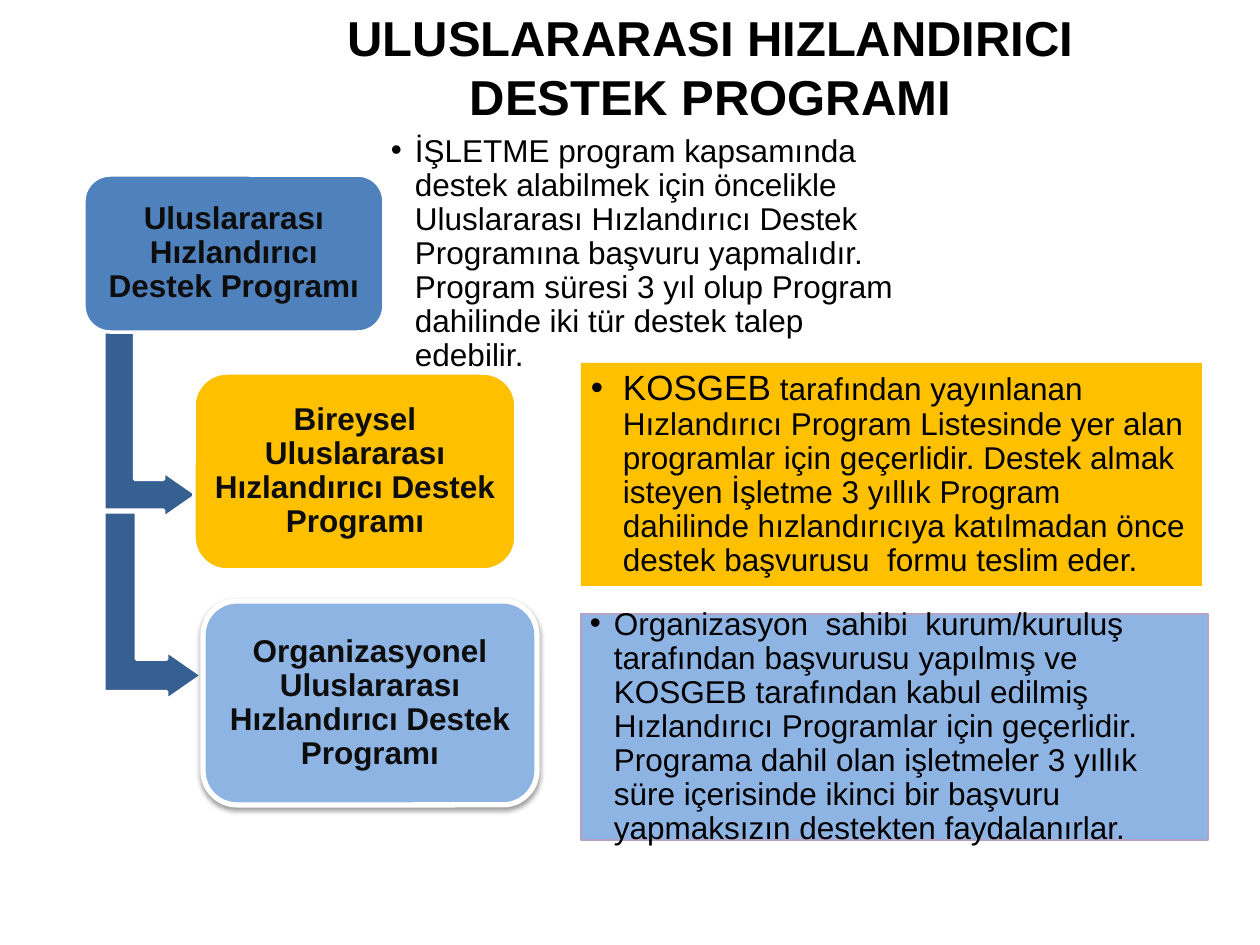
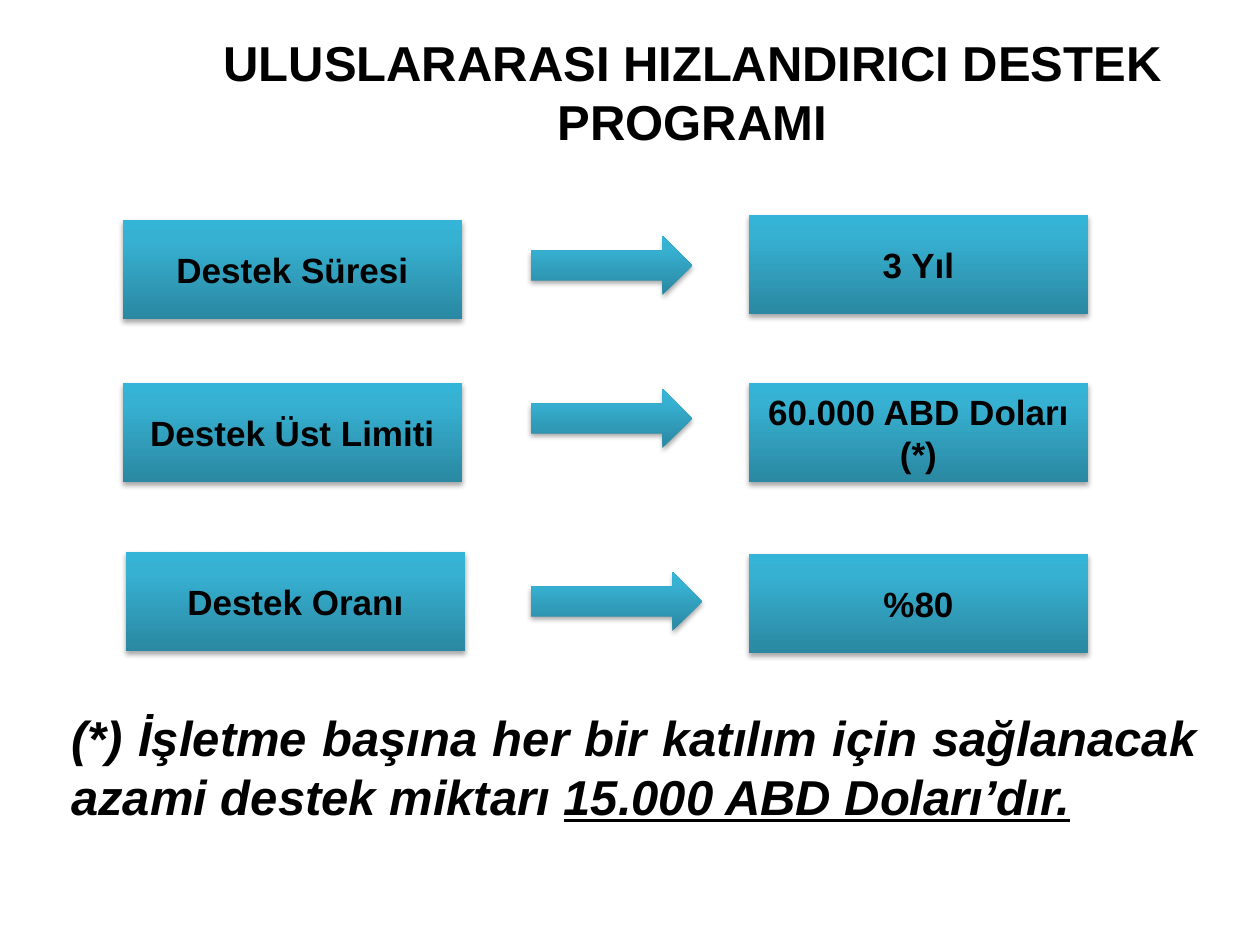
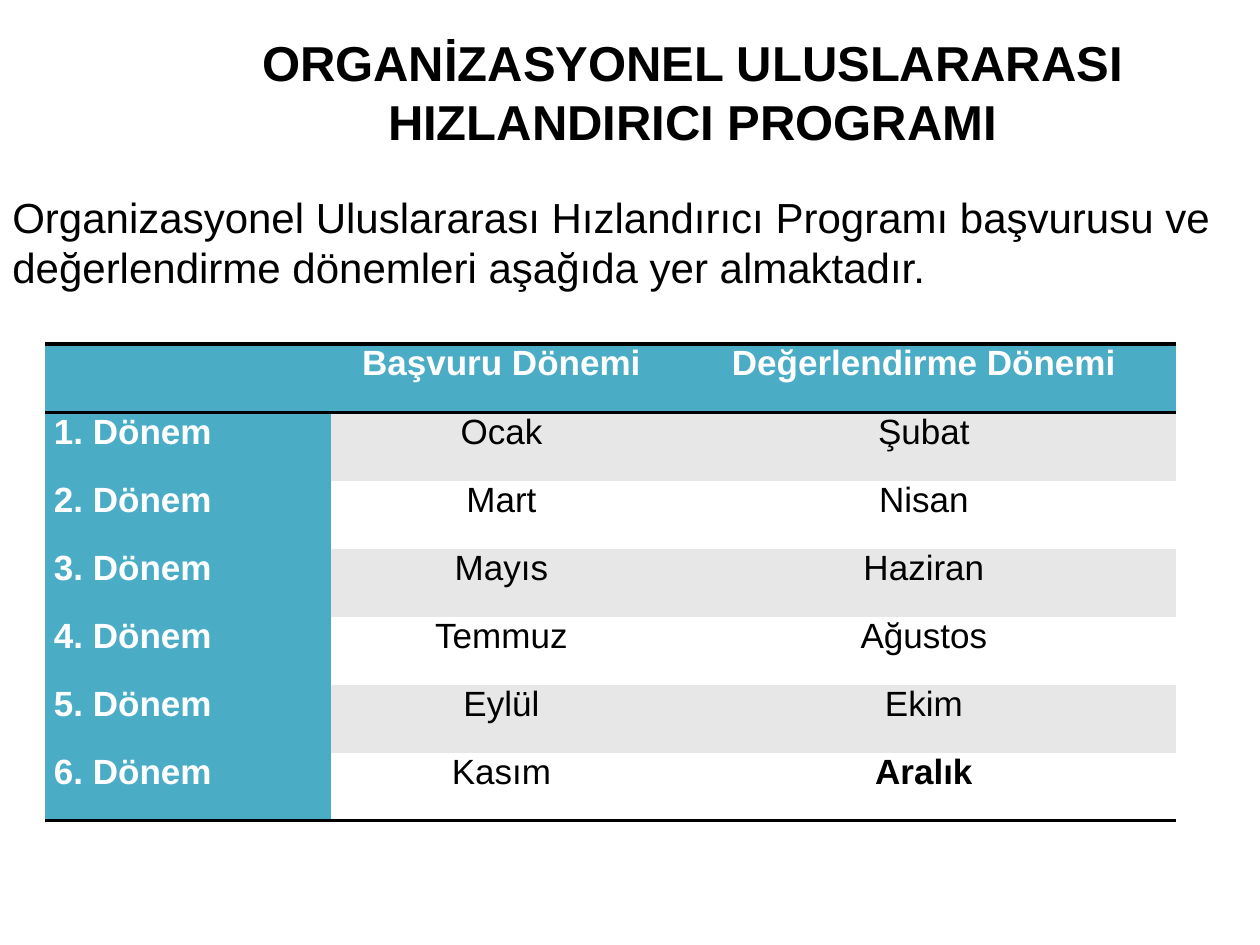
import pptx
import pptx.util
import pptx.dml.color
import pptx.enum.shapes
import pptx.enum.text
import pptx.oxml
import pptx.oxml.ns

PX = 7257  # EMU in one px, 126 px to the inch
FONT = "Arial"
COLORS = {
    "black": "000000", "ink": "0D0D0D", "white": "FFFFFF",
    "blue": "4F81BD", "navy": "376092", "amber": "FFC000",
    "sky": "8EB4E3", "lilac": "B3A2C7", "teal": "4BACC6", "grey": "E7E7E7",
    "deep": "2A88A2", "mid": "37B1D2", "light": "34B4D6",
}
NS = pptx.oxml.ns.nsdecls("a")
SHAPE = pptx.enum.shapes.MSO_SHAPE
ALIGN = pptx.enum.text.PP_ALIGN
MIDDLE = pptx.enum.text.MSO_ANCHOR.MIDDLE
GRADIENT = (
    f'<a:gradFill {NS} rotWithShape="1"><a:gsLst>'
    + "".join(f'<a:gs pos="{pos}"><a:srgbClr val="{COLORS[name]}"/></a:gs>'
              for pos, name in ((0, "deep"), (80000, "mid"), (100000, "light")))
    + '</a:gsLst><a:lin ang="16200000" scaled="0"/></a:gradFill>')


def rgb(name):
    return pptx.dml.color.RGBColor.from_string(COLORS[name])


def write(frame, runs, size, color="black", align=ALIGN.CENTER, inset=None, indent=0, **font):
    """Write one paragraph; each run is its text and the font settings it changes."""
    frame.word_wrap = True
    if inset is not None:
        frame.margin_left = frame.margin_right = inset * PX
        frame.margin_top = frame.margin_bottom = inset * PX
    paragraph = frame.paragraphs[0]
    paragraph.alignment = align
    if indent:
        properties = paragraph._p.get_or_add_pPr()
        properties.set("marL", str(indent * PX))
        properties.set("indent", str(-indent * PX))
        properties.append(pptx.oxml.parse_xml(f'<a:buFont {NS} typeface="{FONT}"/>'))
        properties.append(pptx.oxml.parse_xml(f'<a:buChar {NS} char="•"/>'))
    for text, changes in runs:
        run = paragraph.add_run()
        run.text = text
        run.font.name = FONT
        run.font.color.rgb = rgb(color)
        for key, value in {"size": pptx.util.Pt(size), **font, **changes}.items():
            setattr(run.font, key, value)
    return paragraph


deck = pptx.Presentation()
deck.slide_width = 1260 * PX
deck.slide_height = 945 * PX

# Slides with their titles
program = "ULUSLARARASI HIZLANDIRICI DESTEK PROGRAMI"
slides = []
for heading, at in (
        (program, (233, 1, 955, 131)),
        (program, (174, 26, 1037, 131)),
        ("ORGANİZASYONEL ULUSLARARASI HIZLANDIRICI PROGRAMI", (174, 26, 1037, 131))):
    slide = deck.slides.add_slide(deck.slide_layouts[5])
    title = slide.shapes.title
    title.left, title.top, title.width, title.height = (n * PX for n in at)
    title.text_frame.vertical_anchor = MIDDLE
    write(title.text_frame, [(heading, {})], 28, bold=True)
    slides.append(slide)
overview, terms, periods = slides

# Slide 1: bent arrows, program boxes and their descriptions
PROGRAM_SHAPES = (
    (SHAPE.BENT_UP_ARROW, (53, 374, 195, 93), "navy", "white", 2, None),
    (SHAPE.ROUNDED_RECTANGLE, (84, 175, 300, 157), "blue", "white", 2,
     "Uluslararası Hızlandırıcı Destek Programı"),
    (SHAPE.BENT_UP_ARROW, (59, 557, 188, 98), "navy", "white", 2, None),
    (SHAPE.ROUNDED_RECTANGLE, (194, 373, 322, 197), "amber", "white", 2,
     "Bireysel Uluslararası Hızlandırıcı Destek Programı"),
    (SHAPE.ROUNDED_RECTANGLE, (203, 601, 334, 204), "sky", "white", 3,
     "Organizasyonel Uluslararası Hızlandırıcı Destek Programı"),
)
for kind, at, fill, line, weight, label in PROGRAM_SHAPES:
    shape = overview.shapes.add_shape(kind, *(n * PX for n in at))
    shape.shadow.inherit = False
    shape.fill.solid()
    shape.fill.fore_color.rgb = rgb(fill)
    shape.line.color.rgb = rgb(line)
    shape.line.width = pptx.util.Pt(weight)
    if label is None:
        shape.rotation = 90
        for i, value in enumerate((0.33, 0.25, 0.36)):
            shape.adjustments[i] = value
    else:
        shape.text_frame.vertical_anchor = MIDDLE
        write(shape.text_frame, [(label, {})], 18, "ink", inset=9, bold=True).line_spacing = 0.9
organization_box = shape

DESCRIPTIONS = (
    ((382, 224, 527, 60), None, None, 9, 24, [
        ("İŞLETME program kapsamında destek alabilmek için öncelikle Uluslararası "
         "Hızlandırıcı Destek Programına başvuru yapmalıdır. Program süresi 3 yıl olup "
         "Program dahilinde iki tür destek talep edebilir.", {})]),
    ((581, 363, 621, 223), "amber", None, 10, 32, [
        ("KOSGEB", {"size": pptx.util.Pt(20)}),
        (" tarafından yayınlanan Hızlandırıcı Program Listesinde yer alan programlar için "
         "geçerlidir. Destek almak isteyen İşletme 3 yıllık Program dahilinde hızlandırıcıya "
         "katılmadan önce destek başvurusu  formu teslim eder.", {})]),
    ((581, 614, 627, 226), "sky", "lilac", 9, 24, [
        ("Organizasyon  sahibi  kurum/kuruluş  tarafından başvurusu yapılmış ve KOSGEB "
         "tarafından kabul edilmiş Hızlandırıcı Programlar için geçerlidir. Programa dahil "
         "olan işletmeler 3 yıllık süre içerisinde ikinci bir başvuru yapmaksızın destekten "
         "faydalanırlar.", {})]),
)
for at, fill, line, inset, indent, runs in DESCRIPTIONS:
    description = overview.shapes.add_textbox(*(n * PX for n in at))
    if fill:
        description.fill.solid()
        description.fill.fore_color.rgb = rgb(fill)
    if line:
        description.line.color.rgb = rgb(line)
        description.line.width = pptx.util.Pt(0.75)
    description.text_frame.vertical_anchor = MIDDLE
    write(description.text_frame, runs, 18, align=ALIGN.LEFT,
          inset=inset, indent=indent).line_spacing = 0.9

# Slide 2: each support term points to its value
shaded = [(organization_box, 1.6, 38)]
TERMS = (
    ("Destek Süresi", (123, 220), (236, 161), "3 Yıl", 215),
    ("Destek Üst Limiti", (123, 383), (389, 161), "60.000 ABD Doları (*)", 383),
    ("Destek Oranı", (126, 552), (572, 171), "%80", 554),
)
for term, (left, top), (arrow_top, arrow_width), value, value_top in TERMS:
    for kind, at, label in (
            (SHAPE.RECTANGLE, (left, top, 339, 99), term),
            (SHAPE.RIGHT_ARROW, (531, arrow_top, arrow_width, 59), None),
            (SHAPE.RECTANGLE, (749, value_top, 339, 99), value)):
        shape = terms.shapes.add_shape(kind, *(n * PX for n in at))
        shape.shadow.inherit = False
        shape.line.fill.background()
        shape.fill.gradient()
        properties = shape._element.spPr
        properties.replace(properties.find(pptx.oxml.ns.qn("a:gradFill")),
                           pptx.oxml.parse_xml(GRADIENT))
        shaded.append((shape, 1.8, 35))
        if label:
            shape.text_frame.vertical_anchor = MIDDLE
            write(shape.text_frame, [(label, {})], 20, bold=True)

footnote = terms.shapes.add_textbox(59 * PX, 701 * PX, 1150 * PX, 131 * PX)
write(footnote.text_frame, [
    ("(*) İşletme başına her bir katılım için sağlanacak azami destek miktarı ", {}),
    ("15.000 ABD Doları’dır.", {"underline": True}),
], 28, align=ALIGN.JUSTIFY, bold=True, italic=True)

# Soft shadows below the raised boxes
for shape, distance, opacity in shaded:
    effects = shape._element.spPr.find(pptx.oxml.ns.qn("a:effectLst"))
    effects.append(pptx.oxml.parse_xml(
        f'<a:outerShdw {NS} blurRad="{pptx.util.Pt(3.1)}" dist="{pptx.util.Pt(distance)}" '
        f'dir="5400000" rotWithShape="0"><a:srgbClr val="{COLORS["black"]}">'
        f'<a:alpha val="{opacity * 1000}"/></a:srgbClr></a:outerShdw>'))

# Slide 3: introduction and table of periods
intro = periods.shapes.add_textbox(0, 185 * PX, 1260 * PX, 115 * PX)
write(intro.text_frame, [
    ("Organizasyonel Uluslararası Hızlandırıcı Programı başvurusu ve değerlendirme "
     "dönemleri aşağıda yer almaktadır.", {})], 24, align=ALIGN.LEFT)

MONTHS = (("Ocak", "Şubat"), ("Mart", "Nisan"), ("Mayıs", "Haziran"),
          ("Temmuz", "Ağustos"), ("Eylül", "Ekim"), ("Kasım", "Aralık"))
rows = [("", "Başvuru Dönemi", "Değerlendirme Dönemi")]
rows += [(f"{number}. Dönem", *pair) for number, pair in enumerate(MONTHS, 1)]
calendar = periods.shapes.add_table(
    len(rows), 3, 45 * PX, 344 * PX, 1131 * PX, 475 * PX).table
calendar.first_row = calendar.horz_banding = False
style = calendar._tbl.tblPr.find(pptx.oxml.ns.qn("a:tableStyleId"))
style.text = "{2D5ABB26-0587-4C30-8999-92F81FD0307C}"  # no style, no grid
for column, width in zip(calendar.columns, (286, 341, 504)):
    column.width = width * PX
for r, row in enumerate(rows):
    calendar.rows[r].height = (68 if r else 69) * PX
    for c, text in enumerate(row):
        cell = calendar.cell(r, c)
        edges = {0: ("lnT", "lnB"), len(rows) - 1: ("lnB",)}.get(r, ())
        for edge in edges:
            cell._tc.get_or_add_tcPr().append(pptx.oxml.parse_xml(
                f'<a:{edge} {NS} w="{pptx.util.Pt(2)}"><a:solidFill>'
                f'<a:srgbClr val="{COLORS["black"]}"/></a:solidFill></a:{edge}>'))
        header = r == 0 or c == 0
        cell.fill.solid()
        cell.fill.fore_color.rgb = rgb("teal" if header else "grey" if r % 2 else "white")
        cell.margin_left = cell.margin_right = 9 * PX
        cell.margin_top = cell.margin_bottom = 0
        if text:
            write(cell.text_frame, [(text, {})], 20, "white" if header else "black",
                  ALIGN.CENTER if c else ALIGN.JUSTIFY, bold=header or text == "Aralık")

deck.save("out.pptx")
